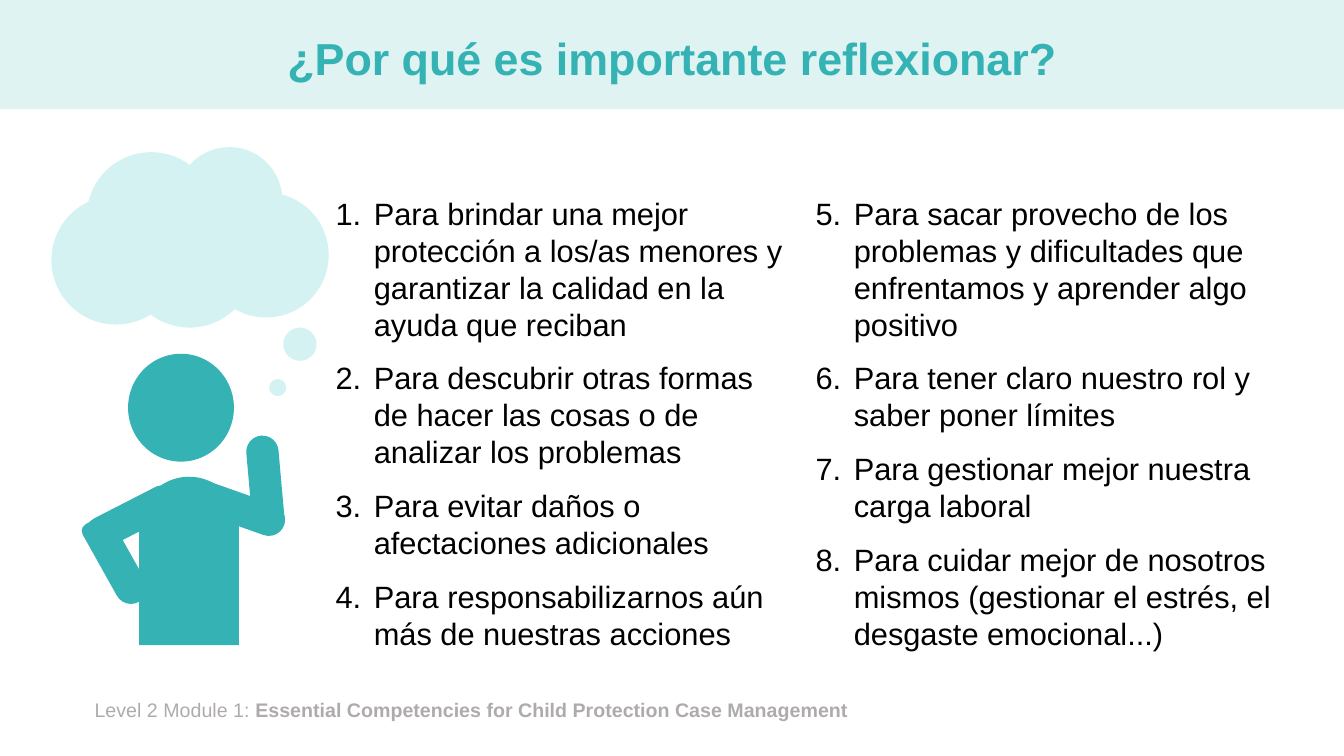
from typing import NamedTuple

from lxml.etree import SubElement
from pptx import Presentation
from pptx.dml.color import RGBColor
from pptx.enum.shapes import MSO_SHAPE
from pptx.enum.text import MSO_ANCHOR, PP_ALIGN
from pptx.oxml.ns import qn
from pptx.slide import Slide
from pptx.text.text import TextFrame, _Paragraph
from pptx.util import Inches, Pt

COLORS = {
    "band": "DEF3F2",
    "cloud": "D4F2F2",
    "teal": "35B2B4",
    "body": "000000",
    "footer": "AFABAB",
}
FONT = "Arial"
NUMBER_INDENT = Inches(0.38)


class Box(NamedTuple):
    left: float
    top: float
    width: float
    height: float


class Part(NamedTuple):
    box: Box
    color: str
    kind: MSO_SHAPE = MSO_SHAPE.OVAL
    rotation: float = 0
    adjustments: tuple[float, ...] = ()


class ReasonColumn(NamedTuple):
    box: Box
    first_number: int
    reasons: tuple[str, ...]


def limb(left: float, top: float, rotation: float) -> Part:
    return Part(Box(left, top, 0.32, 0.93), "teal",
                MSO_SHAPE.ROUND_2_SAME_RECTANGLE, rotation, (0.5, 0.233))


BAND = Part(Box(0, 0, 13.33, 1.08), "band", MSO_SHAPE.RECTANGLE)

THOUGHT_CLOUD = [
    Part(Box(0.86, 1.51, 1.28, 1.28), "cloud"),
    Part(Box(1.75, 1.46, 1.05, 1.05), "cloud"),
    Part(Box(1.24, 1.97, 1.28, 1.28), "cloud"),
    Part(Box(2.02, 1.91, 1.24, 1.24), "cloud"),
    Part(Box(0.51, 1.94, 1.28, 1.28), "cloud"),
    Part(Box(2.81, 3.25, 0.33, 0.33), "cloud"),
    Part(Box(2.67, 3.76, 0.17, 0.17), "cloud"),
]

THINKER = [
    Part(Box(1.27, 3.51, 1.05, 1.07), "teal"),
    Part(Box(1.38, 4.73, 0.99, 1.67), "teal",
         MSO_SHAPE.ROUND_2_SAME_RECTANGLE, 0, (0.5, 0)),
    limb(2.22, 4.59, 109.5),
    limb(2.47, 4.32, 354.9),
    limb(1.12, 4.68, 242.9),
    limb(0.99, 5.1, 150.8),
]

REASON_COLUMNS = [
    ReasonColumn(Box(3.23, 1.88, 4.71, 4.68), 1, (
        "Para brindar una mejor protección a los/as menores y garantizar "
        "la calidad en la ayuda que reciban",
        "Para descubrir otras formas de hacer las cosas o de analizar los problemas",
        "Para evitar daños o afectaciones adicionales",
        "Para responsabilizarnos aún más de nuestras acciones",
    )),
    ReasonColumn(Box(7.99, 1.88, 4.99, 4.68), 5, (
        "Para sacar provecho de los problemas y dificultades que enfrentamos "
        "y aprender algo positivo",
        "Para tener claro nuestro rol y saber poner límites",
        "Para gestionar mejor nuestra carga laboral",
        "Para cuidar mejor de nosotros mismos (gestionar el estrés, "
        "el desgaste emocional...)",
    )),
]


def draw_part(slide: Slide, part: Part) -> None:
    shape = slide.shapes.add_shape(part.kind, *map(Inches, part.box))
    shape.shadow.inherit = False
    shape.fill.solid()
    shape.fill.fore_color.rgb = RGBColor.from_string(COLORS[part.color])
    shape.line.fill.background()
    shape.rotation = part.rotation
    for index, value in enumerate(part.adjustments):
        shape.adjustments[index] = value


def add_text_frame(slide: Slide, box: Box) -> TextFrame:
    frame = slide.shapes.add_textbox(*map(Inches, box)).text_frame
    frame.word_wrap = True
    return frame


def add_run(paragraph: _Paragraph, text: str, size: int, color: str,
            bold: bool = False) -> None:
    run = paragraph.add_run()
    run.text = text
    run.font.name = FONT
    run.font.size = Pt(size)
    run.font.bold = bold
    run.font.color.rgb = RGBColor.from_string(COLORS[color])


def number_paragraph(paragraph: _Paragraph, first_number: int) -> None:
    """Give the paragraph a hanging automatic number."""
    properties = paragraph._p.get_or_add_pPr()
    properties.set("marL", str(NUMBER_INDENT))
    properties.set("indent", str(-NUMBER_INDENT))
    SubElement(properties, qn("a:buFont"), typeface="+mj-lt")
    SubElement(properties, qn("a:buAutoNum"), type="arabicPeriod",
               startAt=str(first_number))


def draw_reasons(slide: Slide, column: ReasonColumn) -> None:
    frame = add_text_frame(slide, column.box)
    for index, reason in enumerate(column.reasons):
        paragraph = frame.add_paragraph() if index else frame.paragraphs[0]
        paragraph.space_after = Pt(12)
        number_paragraph(paragraph, column.first_number)
        add_run(paragraph, reason, 22, "body")


def draw_title(slide: Slide) -> None:
    frame = add_text_frame(slide, Box(0.92, 0.13, 11.5, 0.95))
    frame.vertical_anchor = MSO_ANCHOR.MIDDLE
    title = frame.paragraphs[0]
    title.alignment = PP_ALIGN.CENTER
    title.line_spacing = 0.9
    add_run(title, "¿Por qué es importante reflexionar?", 32, "teal", bold=True)


def draw_footer(slide: Slide) -> None:
    footer = add_text_frame(slide, Box(0.84, 6.87, 10.56, 0.34)).paragraphs[0]
    add_run(footer, "Level 2 Module 1: ", 14, "footer")
    add_run(footer, "Essential Competencies for Child Protection Case Management",
            14, "footer", bold=True)


def main() -> None:
    presentation = Presentation()
    presentation.slide_width = Inches(13.33)
    presentation.slide_height = Inches(7.5)
    slide = presentation.slides.add_slide(presentation.slide_layouts[6])

    draw_part(slide, BAND)
    draw_footer(slide)
    draw_title(slide)
    for part in THOUGHT_CLOUD + THINKER:
        draw_part(slide, part)
    for column in REASON_COLUMNS:
        draw_reasons(slide, column)

    presentation.save("out.pptx")


if __name__ == "__main__":
    main()
